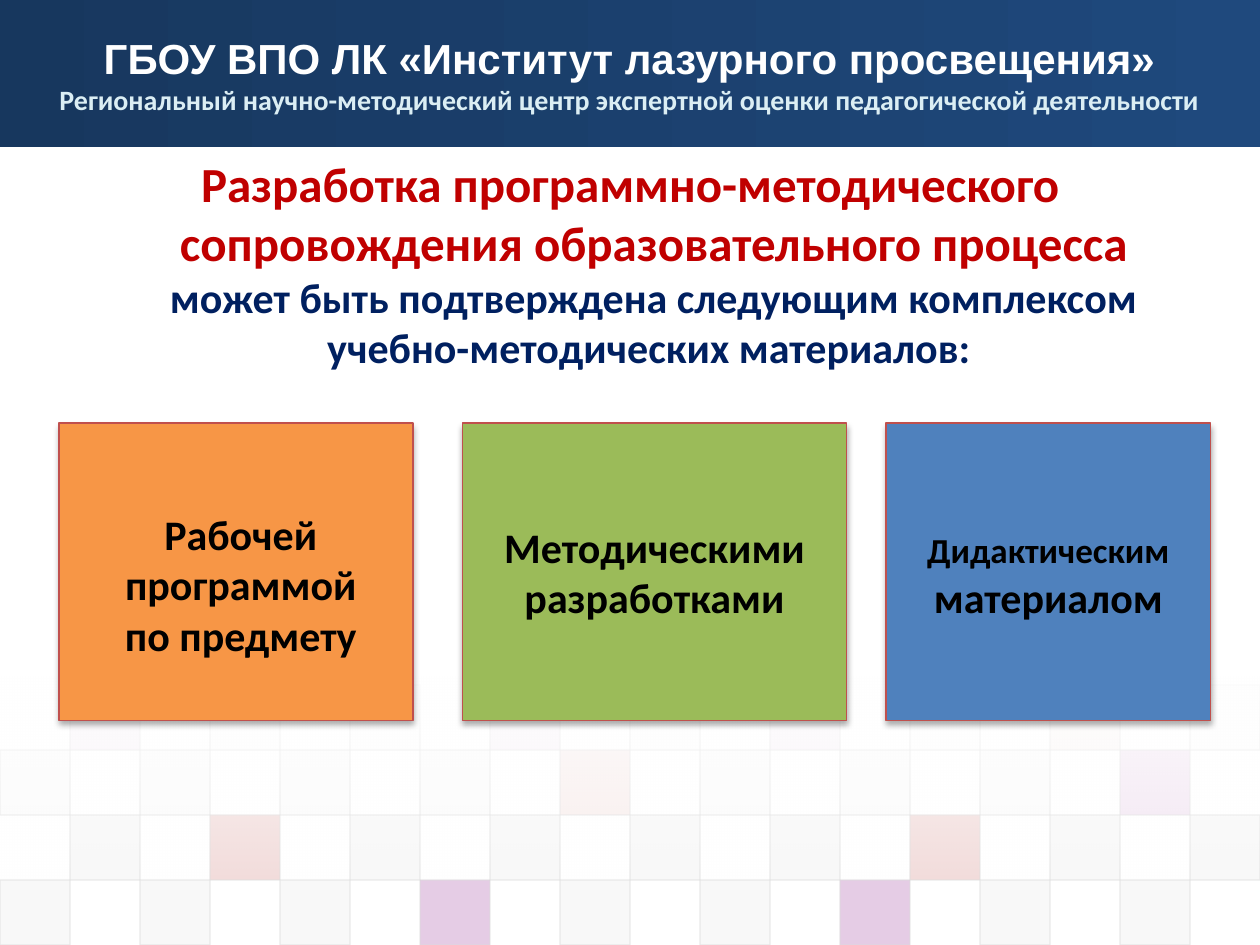
from lxml import etree
from pptx import Presentation
from pptx import util as u
from pptx.dml.color import RGBColor
from pptx.enum import shapes, text
from pptx.oxml import ns

GREY, PALE, RED, PURPLE = "DDDDDD", "EAEAEA", "C0504D", "800080"


def rgb(value):
    return RGBColor.from_string(value)


def child(parent, tag, **attrs):
    return etree.SubElement(parent, ns.qn(tag), {k: str(v) for k, v in attrs.items()})


def set_alpha(element, *percents):
    for color, percent in zip(element.iter(ns.qn("a:srgbClr")), percents):
        child(color, "a:alpha", val=percent * 1000)


class Deck:
    font = "Calibri"
    ink = "000000"
    edge = RED

    def __init__(self, width, height):
        self.prs = Presentation()
        self.prs.slide_width, self.prs.slide_height = u.Cm(width), u.Cm(height)
        self.s = self.prs.slides.add_slide(self.prs.slide_layouts[1])

    def rect(self, box):
        sp = self.s.shapes.add_shape(shapes.MSO_SHAPE.RECTANGLE, *map(u.Cm, box))
        sp.shadow.inherit = False
        return sp

    def gradient(self, box, colors, angle, alphas=()):
        sp = self.rect(box)
        sp.line.fill.background()
        sp.fill.gradient()
        sp.fill.gradient_angle = angle
        for stop, position, color in zip(sp.fill.gradient_stops, (0, 1), colors):
            stop.position, stop.color.rgb = position, rgb(color)
        set_alpha(sp._element.spPr, *alphas)

    def solid(self, box, fill, line):
        sp = self.rect(box)
        sp.fill.solid()
        sp.fill.fore_color.rgb = rgb(fill)
        sp.line.color.rgb = rgb(line)
        sp.line.width = u.Pt(0.75)
        return sp

    def tile(self, box, color, alpha):
        sp = self.solid(box, color, GREY)
        set_alpha(sp._element.spPr, alpha, 60)

    def card(self, box, color):
        sp = self.solid(box, color, self.edge)
        effects = sp._element.spPr.find(ns.qn("a:effectLst"))
        shadow = child(effects, "a:outerShdw", blurRad=u.Pt(3.5), dist=u.Pt(2.2),
                       dir=5400000, rotWithShape=0)
        child(shadow, "a:srgbClr", val="000000")
        set_alpha(shadow, 32)
        return sp

    def label(self, sp, *runs):
        tf = sp.text_frame
        tf.word_wrap = True
        tf.vertical_anchor = text.MSO_ANCHOR.MIDDLE
        self.paragraph(tf.paragraphs[0], [(t, size, self.ink) for t, size in runs])

    def text_box(self, box, *runs):
        self.label(self.s.shapes.add_textbox(*map(u.Cm, box)), *runs)

    def paragraph(self, p, runs, font=None):
        p.alignment = text.PP_ALIGN.CENTER
        p.font.name, p.font.bold = font or self.font, True
        for content, size, color in runs:
            r = p.add_run()
            r.text = content
            r.font.size, r.font.color.rgb = u.Pt(size), rgb(color)

    def placeholder(self, sp, box):
        sp.left, sp.top, sp.width, sp.height = map(u.Cm, box)
        self.s.shapes._spTree.append(sp._element)
        tf = sp.text_frame
        tf.word_wrap = True
        tf.auto_size = text.MSO_AUTO_SIZE.NONE
        tf.vertical_anchor = text.MSO_ANCHOR.TOP
        return tf

    def title(self, box, heading, subtitle):
        tf = self.placeholder(self.s.shapes.title, box)
        self.paragraph(tf.paragraphs[0], [(heading, 24, "FFFFFF")], "Arial")
        self.paragraph(tf.add_paragraph(), [(subtitle, 16, "DBEEF4")])

    def body(self, box, runs):
        p = self.placeholder(self.s.placeholders[1], box).paragraphs[0]
        self.paragraph(p, runs)
        pPr = p._p.get_or_add_pPr()
        pPr.set("marL", str(u.Cm(0.95)))
        pPr.set("indent", str(-u.Cm(0.95)))
        pPr.insert(0, etree.Element(ns.qn("a:buNone")))


def draw_mosaic(deck):
    columns, tile_w, tile_h, top = 18, 25.4 / 18, 1.31, 13.81
    alphas = (5, 10, 20, 20)
    accents = {
        (0, 1): PURPLE, (0, 3): PALE, (0, 5): PALE, (0, 7): PURPLE, (0, 11): PURPLE,
        (0, 13): PALE, (0, 15): RED, (0, 17): PALE,
        (1, 8): RED, (1, 16): PURPLE, (2, 3): RED, (2, 13): RED,
        (3, 6): PURPLE, (3, 12): PURPLE,
    }
    for row, alpha in enumerate(alphas):
        for col in range((row + 1) % 2, columns, 2):
            box = (col * tile_w, top + row * tile_h, tile_w, tile_h)
            deck.tile(box, accents.get((row, col), GREY), alpha)
    deck.gradient((0, 13.64, 25.4, 4.11), ("FFFFFF", "FFFFFF"), 270, (90, 0))


def main():
    deck = Deck(25.4, 19.05)
    deck.gradient((0, 0, 25.4, 2.97), ("17375E", "1F497D"), 0)
    draw_mosaic(deck)
    deck.title((0.03, 0.53, 25.32, 2.21),
               "ГБОУ ВПО ЛК «Институт лазурного просвещения»",
               "Региональный научно-методический центр экспертной оценки "
               "педагогической деятельности")
    deck.body((1.27, 2.97, 22.86, 14.58), [
        ("Разработка программно-методического сопровождения "
         "образовательного процесса ", 28, "C00000"),
        ("может быть подтверждена следующим комплексом "
         "учебно-методических материалов: ", 24, "002060"),
    ])
    top, height = 8.53, 5.99
    deck.card((1.19, top, 7.14, height), "F79646")
    methods = deck.card((9.32, top, 7.75, height), "9BBB59")
    deck.label(methods, ("Методическими разработками", 24))
    didactics = deck.card((17.86, top, 6.55, height), "4F81BD")
    deck.label(didactics, ("Дидактическим", 20), (" материалом", 24))
    deck.text_box((1.78, 10.11, 6.15, 3.33), ("Рабочей программой по предмету", 24))
    deck.prs.save("out.pptx")


if __name__ == "__main__":
    main()
